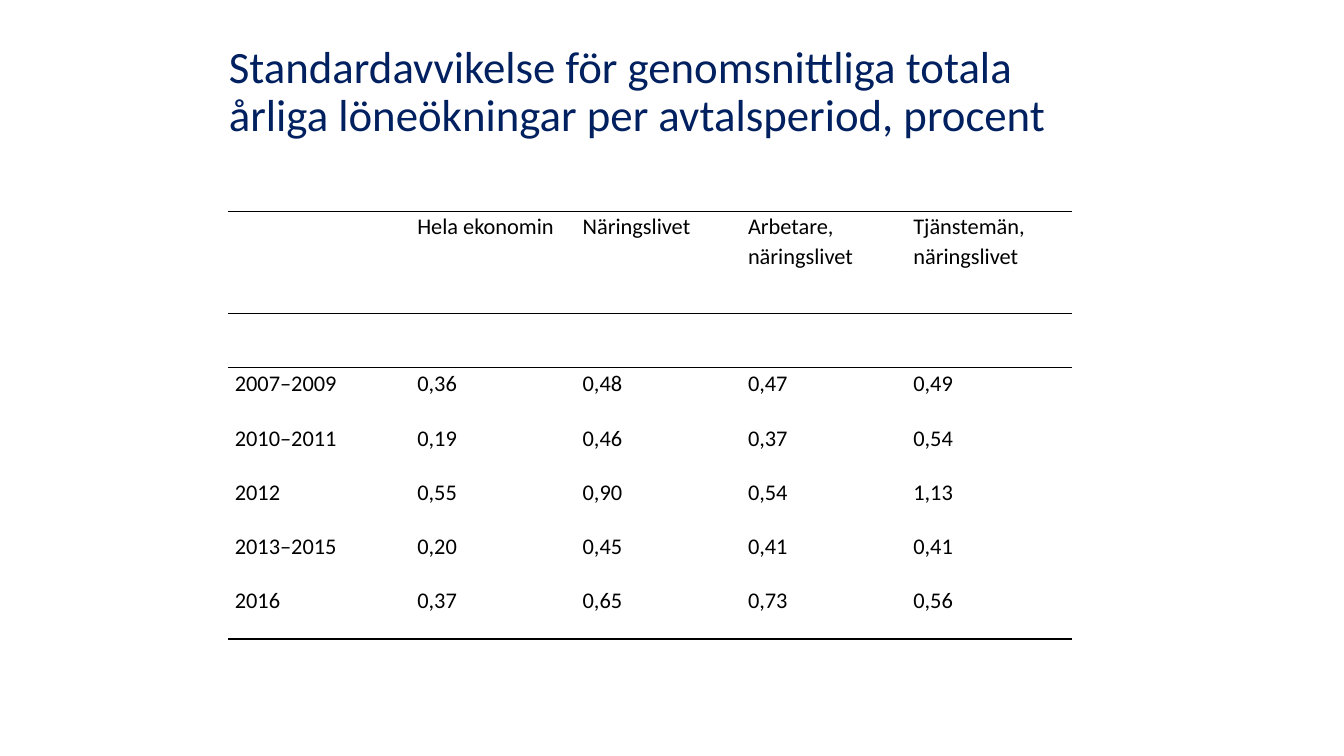
from lxml.etree import SubElement
from pptx import Presentation
from pptx.dml.color import RGBColor
from pptx.enum.text import MSO_ANCHOR, MSO_AUTO_SIZE, PP_ALIGN
from pptx.oxml.ns import qn
from pptx.util import Inches, Pt

COLORS = {"title": "002060", "text": "000000", "rule": "000000"}
FONT = "Calibri"
NO_GRID_STYLE = "{2D5ABB26-0587-4C30-8999-92F81FD0307C}"

TITLE = ("Standardavvikelse för genomsnittliga totala "
         "årliga löneökningar per avtalsperiod, procent")
HEADINGS = ["", "Hela ekonomin", "Näringslivet",
            "Arbetare, näringslivet", "Tjänstemän, näringslivet"]
DEVIATIONS = [
    ["2007–2009", "0,36", "0,48", "0,47", "0,49"],
    ["2010–2011", "0,19", "0,46", "0,37", "0,54"],
    ["2012", "0,55", "0,90", "0,54", "1,13"],
    ["2013–2015", "0,20", "0,45", "0,41", "0,41"],
    ["2016", "0,37", "0,65", "0,73", "0,56"],
]


def format_paragraph(paragraph, size, color, line_spacing):
    paragraph.alignment = PP_ALIGN.LEFT
    paragraph.line_spacing = line_spacing
    for run in paragraph.runs:
        run.font.name = FONT
        run.font.size = Pt(size)
        run.font.color.rgb = RGBColor.from_string(COLORS[color])


def add_title(slide, left, top, width, height):
    title = slide.shapes.title
    title.left, title.top = Inches(left), Inches(top)
    title.width, title.height = Inches(width), Inches(height)
    frame = title.text_frame
    frame.text = TITLE
    frame.word_wrap = True
    frame.auto_size = MSO_AUTO_SIZE.NONE
    frame.vertical_anchor = MSO_ANCHOR.MIDDLE
    format_paragraph(frame.paragraphs[0], 32, "title", 0.9)


def add_rule(cell, side):
    """Draw a 1 pt line on the side lnT (top) or lnB (bottom) of a cell."""
    line = SubElement(cell._tc.get_or_add_tcPr(), qn(f"a:{side}"), w=str(Pt(1)))
    fill = SubElement(line, qn("a:solidFill"))
    SubElement(fill, qn("a:srgbClr"), val=COLORS["rule"])


def fill_cell(cell, text, top_margin):
    cell.margin_left = cell.margin_right = Inches(0.07)
    cell.margin_top, cell.margin_bottom = Inches(top_margin), 0
    cell.fill.background()
    cell.text = text
    paragraph = cell.text_frame.paragraphs[0]
    paragraph.space_after = Pt(8)
    format_paragraph(paragraph, 16, "text", 1.07)


def add_deviation_table(slide, left, top, width, height):
    spacer = [""] * len(HEADINGS)
    rows = [HEADINGS, spacer, *DEVIATIONS]
    last = len(rows) - 1
    frame = slide.shapes.add_table(len(rows), len(HEADINGS), Inches(left),
                                   Inches(top), Inches(width), Inches(height))
    table = frame.table
    table.first_row = table.horz_banding = False
    next(frame.element.iter(qn("a:tableStyleId"))).text = NO_GRID_STYLE

    period_width, header_height = 1.81, 1.01
    for index, column in enumerate(table.columns):
        column.width = Inches((width - period_width) / (len(HEADINGS) - 1)
                              if index else period_width)
    for index, row in enumerate(table.rows):
        row.height = Inches((height - header_height) / last
                            if index else header_height)

    rules = {0: ["lnT", "lnB"], 1: ["lnT"], last: ["lnB"]}
    for r, texts in enumerate(rows):
        for c, text in enumerate(texts):
            cell = table.cell(r, c)
            for side in rules.get(r, []):
                add_rule(cell, side)
            fill_cell(cell, text, 0.01 if r else 0)
    table.cell(1, 0).merge(table.cell(1, len(HEADINGS) - 1))


def main():
    presentation = Presentation()
    presentation.slide_width = Inches(13.33)
    presentation.slide_height = Inches(7.5)
    slide = presentation.slides.add_slide(presentation.slide_layouts[5])
    add_title(slide, 2.17, 0.3, 8.99, 1.25)
    add_deviation_table(slide, 2.26, 2.1, 8.37, 4.24)
    presentation.save("out.pptx")


if __name__ == "__main__":
    main()
